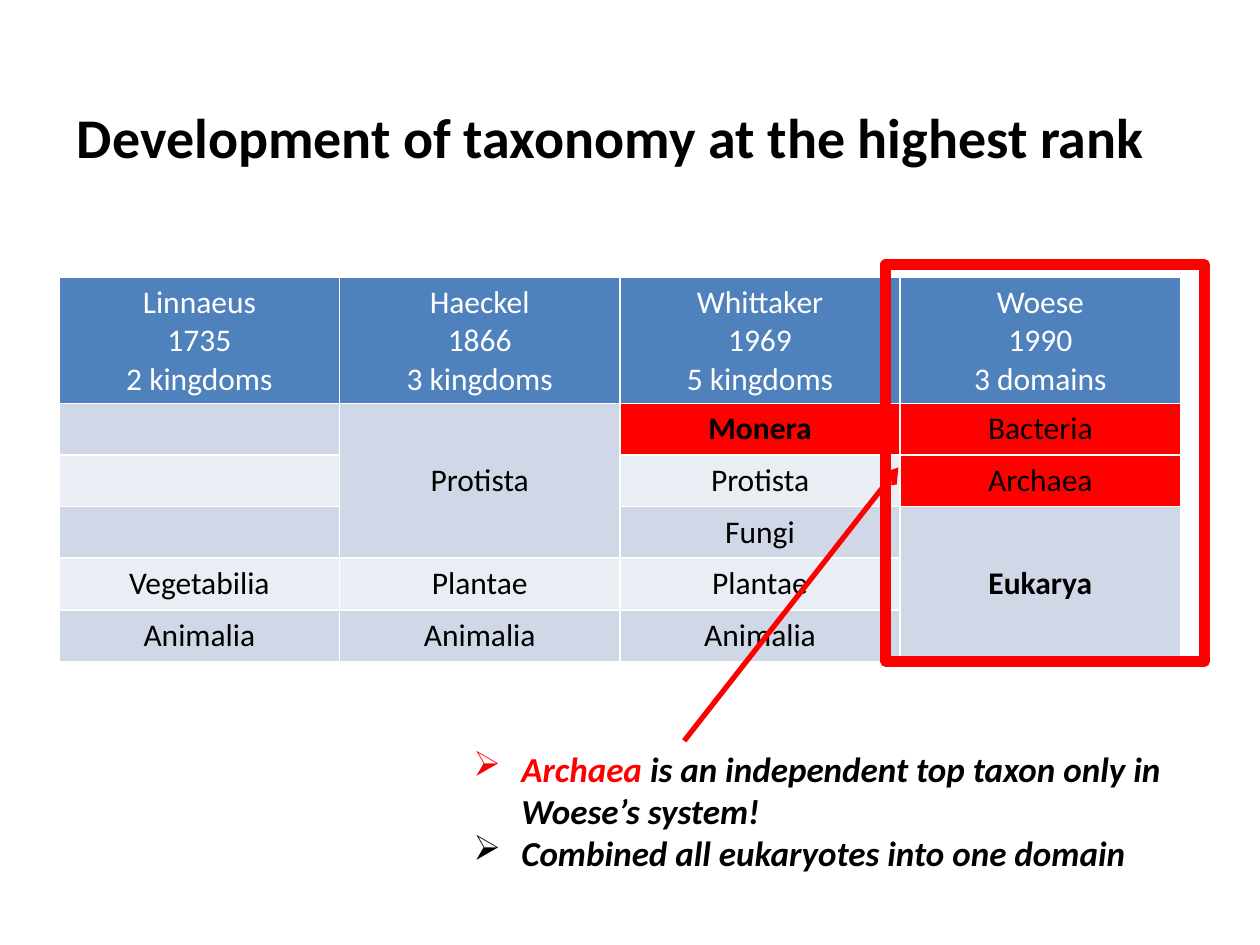
"""Build a slide on the development of taxonomy at the highest rank."""
from dataclasses import dataclass
from typing import Any

from lxml.etree import SubElement
from pptx import Presentation
from pptx.dml.color import RGBColor as Rgb
from pptx.enum.shapes import MSO_CONNECTOR as Connector, MSO_SHAPE as Preset
from pptx.enum.text import MSO_ANCHOR as Anchor, MSO_AUTO_SIZE as AutoSize, PP_ALIGN as Align
from pptx.oxml.ns import qn
from pptx.util import Inches, Pt


@dataclass(frozen=True)
class Theme:
    font: str = "Calibri"
    ink: str = "000000"
    white: str = "FFFFFF"
    accent: str = "FF0000"
    header: str = "4F81BD"
    bands: tuple[str, str] = ("D0D8E8", "E9EDF4")
    title_size: int = 32
    note_size: int = 20
    table_size: int = 18
    border: int = 1
    arrow: int = 3
    frame: int = 6


@dataclass(frozen=True)
class Box:
    left: float
    top: float
    width: float
    height: float

    def lengths(self) -> tuple[int, int, int, int]:
        """Return the box as slide lengths."""
        return Inches(self.left), Inches(self.top), Inches(self.width), Inches(self.height)


@dataclass(frozen=True)
class Entry:
    name: str = ""
    rows: int = 1
    highlighted: bool = False
    bold: bool = False


@dataclass(frozen=True)
class System:
    author: str
    year: str
    ranks: str
    entries: tuple[Entry, ...]


THEME = Theme()
TITLE_BOX = Box(0.51, 0.76, 9.19, 0.64)
NOTES_BOX = Box(3.66, 5.88, 6.06, 1.11)
TABLE_BOX = Box(0.47, 2.2, 8.9, 3.05)
FRAME_BOX = Box(7.03, 2.1, 2.53, 3.15)
ARROW_START, ARROW_END = (5.43, 5.88), (7.13, 3.71)
HEADER_HEIGHT, ROW_HEIGHT = 1.0, 0.41
NOTE_INDENT = 0.38

SYSTEMS = (
    System("Linnaeus", "1735", "2 kingdoms",
           (Entry(), Entry(), Entry(), Entry("Vegetabilia"), Entry("Animalia"))),
    System("Haeckel", "1866", "3 kingdoms",
           (Entry("Protista", rows=3), Entry("Plantae"), Entry("Animalia"))),
    System("Whittaker", "1969", "5 kingdoms",
           (Entry("Monera", highlighted=True, bold=True), Entry("Protista"), Entry("Fungi"),
            Entry("Plantae"), Entry("Animalia"))),
    System("Woese", "1990", "3 domains",
           (Entry("Bacteria", highlighted=True), Entry("Archaea", highlighted=True),
            Entry("Eukarya", rows=3, bold=True))),
)
NOTES = (
    (("Archaea", THEME.accent),
     (" is an independent top taxon only in Woese’s system!", THEME.ink)),
    (("Combined all eukaryotes into one domain", THEME.ink),),
)


def write_text(paragraph: Any, text: str, *, size: int, color: str = THEME.ink,
               bold: bool = False, italic: bool = False, align: Any = None) -> None:
    """Add a formatted run to a paragraph."""
    if align is not None:
        paragraph.alignment = align
    run = paragraph.add_run()
    run.text = text
    font = run.font
    font.name, font.size, font.bold, font.italic = THEME.font, Pt(size), bold, italic
    font.color.rgb = Rgb.from_string(color)


def paragraph_at(frame: Any, index: int) -> Any:
    """Return the first paragraph of a frame, or add a further one."""
    return frame.add_paragraph() if index else frame.paragraphs[0]


def add_title(slide: Any, text: str) -> None:
    """Place and fill the title placeholder."""
    title = slide.shapes.title
    title.left, title.top, title.width, title.height = TITLE_BOX.lengths()
    frame = title.text_frame
    frame.auto_size, frame.vertical_anchor = AutoSize.NONE, Anchor.TOP
    write_text(frame.paragraphs[0], text, size=THEME.title_size, bold=True, align=Align.LEFT)


def add_notes(slide: Any) -> None:
    """Add the bulleted remarks."""
    frame = slide.shapes.add_textbox(*NOTES_BOX.lengths()).text_frame
    frame.word_wrap = True
    for index, runs in enumerate(NOTES):
        paragraph = paragraph_at(frame, index)
        properties = paragraph._p.get_or_add_pPr()
        properties.set("marL", str(Inches(NOTE_INDENT)))
        properties.set("indent", str(-Inches(NOTE_INDENT)))
        SubElement(properties, qn("a:buChar")).set("char", "➢")
        for text, color in runs:
            write_text(paragraph, text, size=THEME.note_size, color=color, bold=True, italic=True)


def style_cell(cell: Any, fill: str) -> None:
    """Give a cell its borders, fill and middle anchor."""
    properties = cell._tc.get_or_add_tcPr()
    for side in ("L", "R", "T", "B"):
        line = SubElement(properties, qn(f"a:ln{side}"), w=str(Pt(THEME.border)))
        color = SubElement(SubElement(line, qn("a:solidFill")), qn("a:srgbClr"))
        color.set("val", THEME.white)
    cell.fill.solid()
    cell.fill.fore_color.rgb = Rgb.from_string(fill)
    cell.vertical_anchor = Anchor.MIDDLE


def fill_column(table: Any, column: int, system: System) -> None:
    """Write one classification system down a table column."""
    header = table.cell(0, column)
    style_cell(header, THEME.header)
    for index, text in enumerate((system.author, system.year, system.ranks)):
        write_text(paragraph_at(header.text_frame, index), text, size=THEME.table_size,
                   color=THEME.white, align=Align.CENTER)
    row = 1
    for entry in system.entries:
        band = THEME.bands[(row - 1) % len(THEME.bands)]
        for offset in range(entry.rows):
            style_cell(table.cell(row + offset, column),
                       THEME.accent if entry.highlighted else band)
        cell = table.cell(row, column)
        if entry.rows > 1:
            cell.merge(table.cell(row + entry.rows - 1, column))
        if entry.name:
            write_text(cell.text_frame.paragraphs[0], entry.name, size=THEME.table_size,
                       bold=entry.bold, align=Align.CENTER)
        row += entry.rows


def add_systems_table(slide: Any) -> None:
    """Add the table comparing the classification systems."""
    row_count = 1 + sum(entry.rows for entry in SYSTEMS[0].entries)
    table = slide.shapes.add_table(row_count, len(SYSTEMS), *TABLE_BOX.lengths()).table
    for index, row in enumerate(table.rows):
        row.height = Inches(ROW_HEIGHT if index else HEADER_HEIGHT)
    for column, system in enumerate(SYSTEMS):
        fill_column(table, column, system)


def style_line(shape: Any, width: int) -> Any:
    """Give a shape an accent line with round joins and return the line element."""
    shape.line.color.rgb = Rgb.from_string(THEME.accent)
    shape.line.width = Pt(width)
    line = shape.line._get_or_add_ln()
    SubElement(line, qn("a:round"))
    return line


def add_frame(slide: Any) -> None:
    """Outline the Woese column."""
    frame = slide.shapes.add_shape(Preset.RECTANGLE, *FRAME_BOX.lengths())
    frame.shadow.inherit = False
    frame.fill.background()
    style_line(frame, THEME.frame)


def add_arrow(slide: Any) -> None:
    """Point from the remarks to Archaea."""
    points = (Inches(value) for value in ARROW_START + ARROW_END)
    arrow = slide.shapes.add_connector(Connector.STRAIGHT, *points)
    SubElement(style_line(arrow, THEME.arrow), qn("a:tailEnd"), type="arrow")
    SubElement(arrow._element.spPr, qn("a:effectLst"))


def main() -> None:
    """Build and save the presentation."""
    presentation = Presentation()
    presentation.slide_width, presentation.slide_height = Inches(10), Inches(7.5)
    slide = presentation.slides.add_slide(presentation.slide_layouts[5])
    add_title(slide, "Development of taxonomy at the highest rank")
    add_notes(slide)
    add_systems_table(slide)
    add_frame(slide)
    add_arrow(slide)
    presentation.save("out.pptx")


if __name__ == "__main__":
    main()
